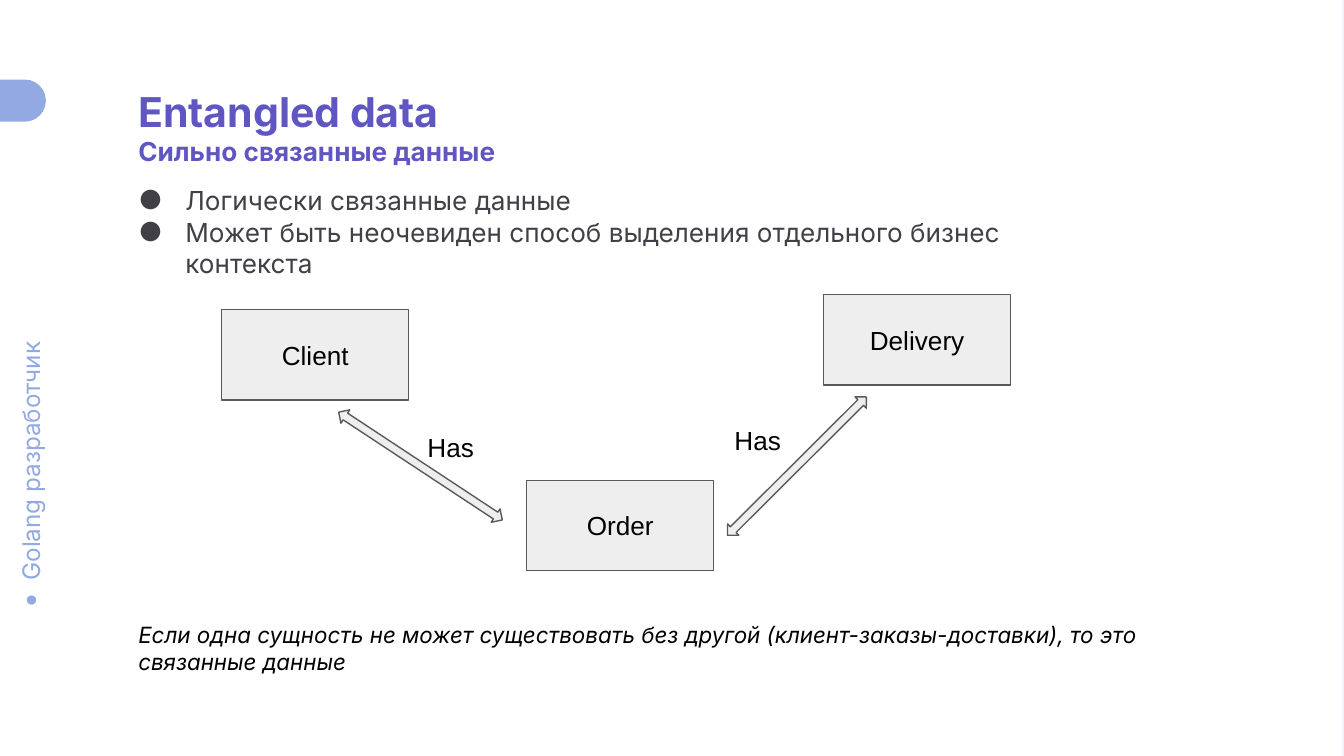
from lxml import etree
from pptx import Presentation
from pptx.dml.color import RGBColor
from pptx.enum.shapes import MSO_SHAPE
from pptx.enum.text import MSO_ANCHOR, PP_ALIGN
from pptx.oxml.ns import qn
from pptx.util import Pt

RECT, OVAL = MSO_SHAPE.RECTANGLE, MSO_SHAPE.OVAL
PILL, DOUBLE_ARROW = MSO_SHAPE.ROUNDED_RECTANGLE, MSO_SHAPE.LEFT_RIGHT_ARROW
MIDDLE, CENTER = MSO_ANCHOR.MIDDLE, PP_ALIGN.CENTER
COLORS = {
    "edge": "F1F4FF", "page": "FFFFFF", "accent": "92A9E2", "heading": "6056C2",
    "body": "414046", "black": "000000", "box": "EEEEEE", "outline": "595959",
}


def add_figure(kind, left, top, width, height, fill, outlined=False):
    figure = slide.shapes.add_shape(kind, Pt(left), Pt(top), Pt(width), Pt(height))
    figure.shadow.inherit = False
    figure.fill.solid()
    figure.fill.fore_color.rgb = RGBColor.from_string(COLORS[fill])
    if outlined:
        figure.line.color.rgb = RGBColor.from_string(COLORS["outline"])
        figure.line.width = Pt(0.75)
    else:
        figure.line.fill.background()
    return figure


def write(shape, lines, color, font="Inter", margin=7.2, bold=False, italic=False):
    """Fill the shape with one paragraph per (text, size) pair."""
    frame = shape.text_frame
    frame.word_wrap = True
    frame.margin_left = frame.margin_right = Pt(7.2)
    frame.margin_top = frame.margin_bottom = Pt(margin)
    for index, (text, size) in enumerate(lines):
        paragraph = frame.add_paragraph() if index else frame.paragraphs[0]
        run = paragraph.add_run()
        run.text = text
        run.font.name = font
        run.font.size = Pt(size)
        run.font.bold = bold
        run.font.italic = italic
        run.font.color.rgb = RGBColor.from_string(COLORS[color])
    return frame


prs = Presentation()
prs.slide_width, prs.slide_height = Pt(720), Pt(405)
slide = prs.slides.add_slide(prs.slide_layouts[6])
slide.background.fill.solid()
slide.background.fill.fore_color.rgb = RGBColor.from_string(COLORS["edge"])

# Page and side strip
add_figure(RECT, 0, 0, 719, 405, "page")
course = slide.shapes.add_textbox(Pt(-55.5), Pt(231), Pt(144), Pt(30))
course.rotation = 270
write(course, [("Golang разработчик", 13)], "accent")
add_figure(OVAL, 14.4, 319, 5, 5, "accent")
tab = add_figure(PILL, -27.4, 42.6, 52, 22.6, "accent")
tab.adjustments[0] = 0.5

# Heading, conclusion and bullets
heading = slide.shapes.add_textbox(Pt(67), Pt(42.6), Pt(441), Pt(34))
write(heading, [("Entangled data", 22), ("Сильно связанные данные", 14)],
      "heading", margin=3.6, bold=True)

conclusion = slide.shapes.add_textbox(Pt(67), Pt(325.5), Pt(608), Pt(44))
write(conclusion, [("Если одна сущность не может существовать без другой "
                    "(клиент-заказы-доставки), то это связанные данные", 12)],
      "black", italic=True)

traits = slide.shapes.add_textbox(Pt(56.2), Pt(95.4), Pt(519), Pt(58))
traits_frame = write(traits, [
    ("Логически связанные данные", 14),
    ("Может быть неочевиден способ выделения отдельного бизнес контекста", 14),
], "body", margin=3.6)
for paragraph in traits_frame.paragraphs:
    properties = paragraph._p.get_or_add_pPr()
    properties.set("marL", str(Pt(36)))
    properties.set("indent", str(Pt(-25)))
    bullet_color = etree.SubElement(properties, qn("a:buClr"))
    etree.SubElement(bullet_color, qn("a:srgbClr"), val=COLORS["body"])
    etree.SubElement(properties, qn("a:buFont"), typeface="Inter")
    etree.SubElement(properties, qn("a:buChar"), char="●")

# Entities
for name, left, top in [("Client", 118.8, 165.8), ("Order", 282.2, 257.3),
                        ("Delivery", 441.2, 157.7)]:
    entity = add_figure(RECT, left, top, 100.2, 48.5, "box", outlined=True)
    entity_frame = write(entity, [(name, 14)], "black", font="Arial")
    entity_frame.vertical_anchor = MIDDLE
    entity_frame.paragraphs[0].alignment = CENTER

# Relations: arrow left, angle, label position
for arrow_left, angle, label_left, label_top in [(172.8, 33.4, 221.9, 224),
                                                (374.4, 135.1, 386.4, 220.3)]:
    arrow = add_figure(DOUBLE_ARROW, arrow_left, 245.4, 105, 8.6, "box", outlined=True)
    arrow.rotation = angle
    label = slide.shapes.add_textbox(Pt(label_left), Pt(label_top), Pt(43.2), Pt(22.3))
    write(label, [("Has", 14)], "black", font="Arial")

prs.save("out.pptx")
